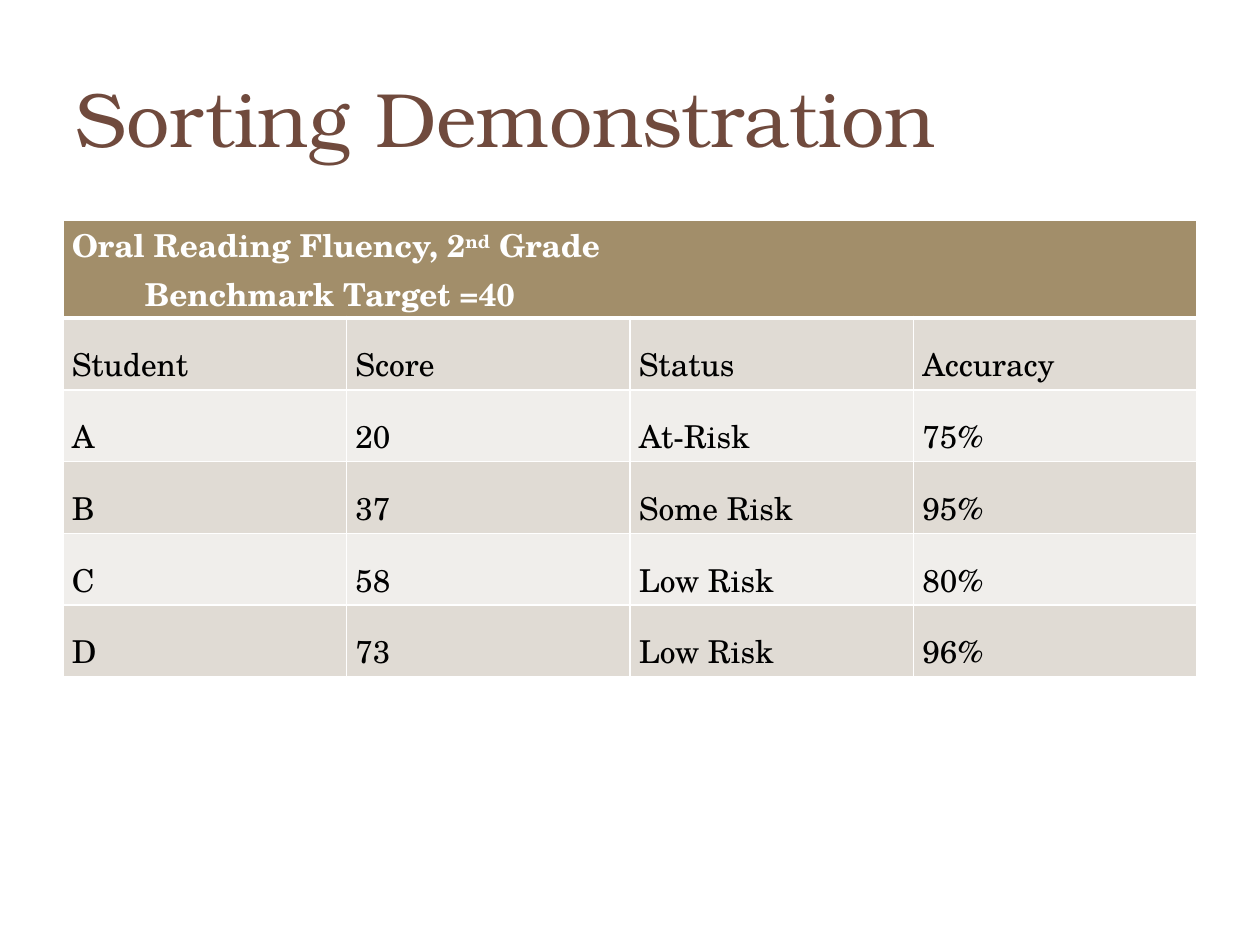
from pptx import Presentation
from pptx.dml.color import RGBColor
from pptx.enum.text import MSO_ANCHOR, MSO_AUTO_SIZE, PP_ALIGN
from pptx.oxml.ns import qn
from pptx.util import Inches, Pt
from lxml import etree

LEFT = PP_ALIGN.LEFT
MIDDLE = MSO_ANCHOR.MIDDLE
NO_AUTOFIT = MSO_AUTO_SIZE.NONE

HEADING = [[("Oral Reading Fluency, 2", 0), ("nd", 30), (" Grade", 0)],
           [("Benchmark Target =40", 0)]]
HEADING_INDENTS = [0, 0.58]
SCORES = [
    ["Student", "Score", "Status", "Accuracy"],
    ["A", "20", "At-Risk", "75%"],
    ["B", "37", "Some Risk", "95%"],
    ["C", "58", "Low Risk", "80%"],
    ["D", "73", "Low Risk", "96%"],
]


def color(hex_string):
    return RGBColor.from_string(hex_string)


def apply_format(target, values):
    for name, value in values.items():
        setattr(target, name, value)


class SlideBuilder:
    title_font = {"name": "TeX Gyre Bonum", "size": Pt(44)}
    table_font = {"name": "TeX Gyre Schola", "size": Pt(18)}
    cell_format = {"margin_left": Inches(0.07), "margin_right": Inches(0.07),
                   "margin_top": 0, "margin_bottom": 0}
    title_color = "704A3D"
    heading_fill = "A28E6A"
    band_fills = ["E0DBD4", "F0EEEB"]
    white = "FFFFFF"
    black = "000000"

    def __init__(self, slide):
        self.slide = slide

    def add_title(self, text, left, top, width, height):
        title = self.slide.shapes.title
        apply_format(title, {"left": Inches(left), "top": Inches(top),
                             "width": Inches(width), "height": Inches(height)})
        apply_format(title.text_frame, {"text": text, "word_wrap": True,
                                        "auto_size": NO_AUTOFIT,
                                        "vertical_anchor": MIDDLE})
        paragraph = title.text_frame.paragraphs[0]
        paragraph.alignment = LEFT
        self.style_run(paragraph.runs[0], self.title_font, self.title_color)

    def style_run(self, run, font, font_color, bold=False):
        apply_format(run.font, {**font, "bold": bold})
        run.font.color.rgb = color(font_color)

    def style_cell(self, cell, fill, top_width=1, bottom_width=1):
        apply_format(cell, self.cell_format)
        properties = cell._tc.get_or_add_tcPr()
        widths = {"a:lnL": 1, "a:lnR": 1, "a:lnT": top_width, "a:lnB": bottom_width}
        for tag, width in widths.items():
            line = etree.SubElement(properties, qn(tag), w=str(Pt(width)))
            solid = etree.SubElement(line, qn("a:solidFill"))
            etree.SubElement(solid, qn("a:srgbClr"), val=self.white)
        # Borders come before the fill in the cell properties
        cell.fill.solid()
        cell.fill.fore_color.rgb = color(fill)

    def fill_heading(self, cell, lines, indents):
        frame = cell.text_frame
        for index, (line, indent) in enumerate(zip(lines, indents)):
            paragraph = frame.add_paragraph() if index else frame.paragraphs[0]
            paragraph._p.get_or_add_pPr().set("marL", str(Inches(indent)))
            for text, raised in line:
                run = paragraph.add_run()
                run.text = text
                self.style_run(run, self.table_font, self.white, bold=True)
                if raised:
                    run._r.get_or_add_rPr().set("baseline", str(raised * 1000))

    def add_table(self, heading, indents, rows, left, top, width,
                  heading_height, row_height):
        columns = len(rows[0])
        height = heading_height + row_height * len(rows)
        table = self.slide.shapes.add_table(
            len(rows) + 1, columns, Inches(left), Inches(top),
            Inches(width), Inches(height)).table
        table.rows[0].height = Inches(heading_height)

        # Heading across all columns
        for column in range(columns):
            self.style_cell(table.cell(0, column), self.heading_fill, bottom_width=3)
        table.cell(0, 0).merge(table.cell(0, columns - 1))
        self.fill_heading(table.cell(0, 0), heading, indents)

        # Banded body rows
        for row, values in enumerate(rows, start=1):
            table.rows[row].height = Inches(row_height)
            fill = self.band_fills[(row - 1) % 2]
            for column, value in enumerate(values):
                cell = table.cell(row, column)
                self.style_cell(cell, fill, top_width=3 if row == 1 else 1)
                cell.text = value
                paragraph = cell.text_frame.paragraphs[0]
                paragraph.line_spacing = 1.5
                self.style_run(paragraph.runs[0], self.table_font, self.black)


def main():
    presentation = Presentation()
    presentation.slide_width = Inches(10)
    presentation.slide_height = Inches(7.5)
    title_only = presentation.slide_layouts[5]
    builder = SlideBuilder(presentation.slides.add_slide(title_only))

    builder.add_title("Sorting Demonstration", 0.5, 0.3, 9, 1.25)
    builder.add_table(HEADING, HEADING_INDENTS, SCORES, left=0.5, top=1.75,
                      width=9, heading_height=0.75, row_height=0.57)
    presentation.save("out.pptx")


if __name__ == "__main__":
    main()
